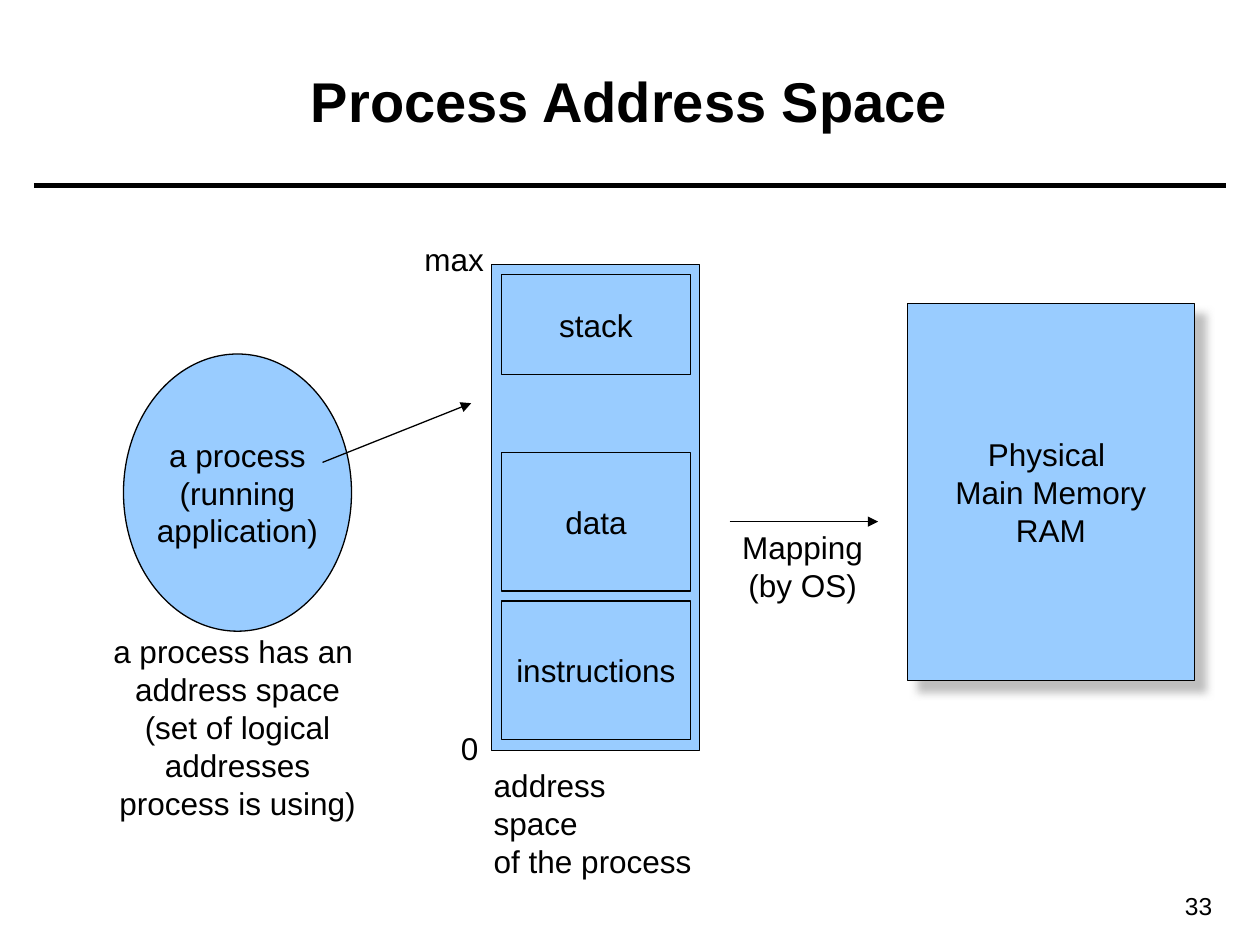
"""Build a slide on how a process address space maps to main memory."""
from lxml import etree
from pptx import Presentation
from pptx.dml.color import RGBColor
from pptx.enum.shapes import MSO_CONNECTOR, MSO_SHAPE
from pptx.enum.text import MSO_ANCHOR, PP_ALIGN
from pptx.oxml.ns import qn
from pptx.util import Inches, Pt

LEFT, CENTER, RIGHT = PP_ALIGN.LEFT, PP_ALIGN.CENTER, PP_ALIGN.RIGHT
TOP, MIDDLE = MSO_ANCHOR.TOP, MSO_ANCHOR.MIDDLE
RECTANGLE, OVAL = MSO_SHAPE.RECTANGLE, MSO_SHAPE.OVAL
STRAIGHT = MSO_CONNECTOR.STRAIGHT
COLORS = {"ink": "000000", "block": "99CCFF", "shadow": "808080"}
INK = RGBColor.from_string(COLORS["ink"])
BLOCK = RGBColor.from_string(COLORS["block"])


def write_text(box, paragraphs, size=18, bold=False, align=CENTER, anchor=TOP, wrap=False):
    frame = box.text_frame
    frame.word_wrap = wrap
    frame.vertical_anchor = anchor
    for index, text in enumerate(paragraphs):
        para = frame.paragraphs[0] if index == 0 else frame.add_paragraph()
        para.text = text
        para.alignment = align
        for span in para.runs:
            span.font.name = "Arial"
            span.font.size = Pt(size)
            span.font.bold = bold
            span.font.color.rgb = INK


def draw_line(page, start, end, width=0.75, arrow=True):
    line = page.shapes.add_connector(STRAIGHT, *map(Inches, start + end))
    line.line.color.rgb = INK
    line.line.width = Pt(width)
    if arrow:
        etree.SubElement(line.line._get_or_add_ln(), qn("a:tailEnd"), type="triangle")
    etree.SubElement(line._element.spPr, qn("a:effectLst"))


deck = Presentation()
deck.slide_width, deck.slide_height = Inches(10), Inches(7.5)
page = deck.slides.add_slide(deck.slide_layouts[6])

draw_line(page, (0.27, 1.47), (9.73, 1.47), width=3, arrow=False)

blocks = [
    (OVAL, (0.98, 2.81, 1.81, 2.2), ["a process", "(running\napplication)"]),
    (RECTANGLE, (3.9, 2.1, 1.65, 3.86), []),
    (RECTANGLE, (3.98, 4.77, 1.5, 1.1), ["instructions"]),
    (RECTANGLE, (3.98, 3.59, 1.5, 1.1), ["data"]),
    (RECTANGLE, (3.98, 2.18, 1.5, 0.79), ["stack"]),
    (RECTANGLE, (7.2, 2.41, 2.28, 2.99), ["Physical ", "Main Memory", "RAM"]),
]
for kind, place, paragraphs in blocks:
    block = page.shapes.add_shape(kind, *map(Inches, place))
    block.shadow.inherit = False
    block.fill.solid()
    block.fill.fore_color.rgb = BLOCK
    block.line.color.rgb = INK
    block.line.width = Pt(0.75)
    write_text(block, paragraphs, anchor=MIDDLE)

memory = block
effects = memory._element.spPr.find(qn("a:effectLst"))
shadow = etree.SubElement(
    effects, qn("a:outerShdw"), blurRad=str(Pt(5)), dist=str(Pt(8.5)),
    dir=str(45 * 60000), algn="tl", rotWithShape="0",
)
shade = etree.SubElement(shadow, qn("a:srgbClr"), val=COLORS["shadow"])
etree.SubElement(shade, qn("a:alpha"), val="50000")

draw_line(page, (2.56, 3.67), (3.74, 3.2))
draw_line(page, (5.79, 4.14), (6.97, 4.14))

labels = [
    ((0.35, 0.17, 9.29, 1.25), ["Process Address Space"],
     {"size": 32, "bold": True, "anchor": MIDDLE, "wrap": True}),
    ((3.82, 6.03, 1.82, 0.7), ["address space", "of the process"], {"align": LEFT}),
    ((5.79, 4.14, 1.16, 0.7), ["Mapping", "(by OS)"], {}),
    ((3.56, 5.74, 0.34, 0.4), ["0"], {"align": LEFT}),
    ((3.27, 1.86, 0.67, 0.4), ["max"], {"align": LEFT}),
    ((0.44, 4.97, 2.89, 1.3),
     ["a process has an ", "address space", "(set of logical addresses\nprocess is using)"], {}),
    ((8.68, 7.02, 1.04, 0.34), ["33"], {"size": 14, "align": RIGHT, "wrap": True}),
]
for place, paragraphs, style in labels:
    write_text(page.shapes.add_textbox(*map(Inches, place)), paragraphs, **style)

deck.save("out.pptx")
